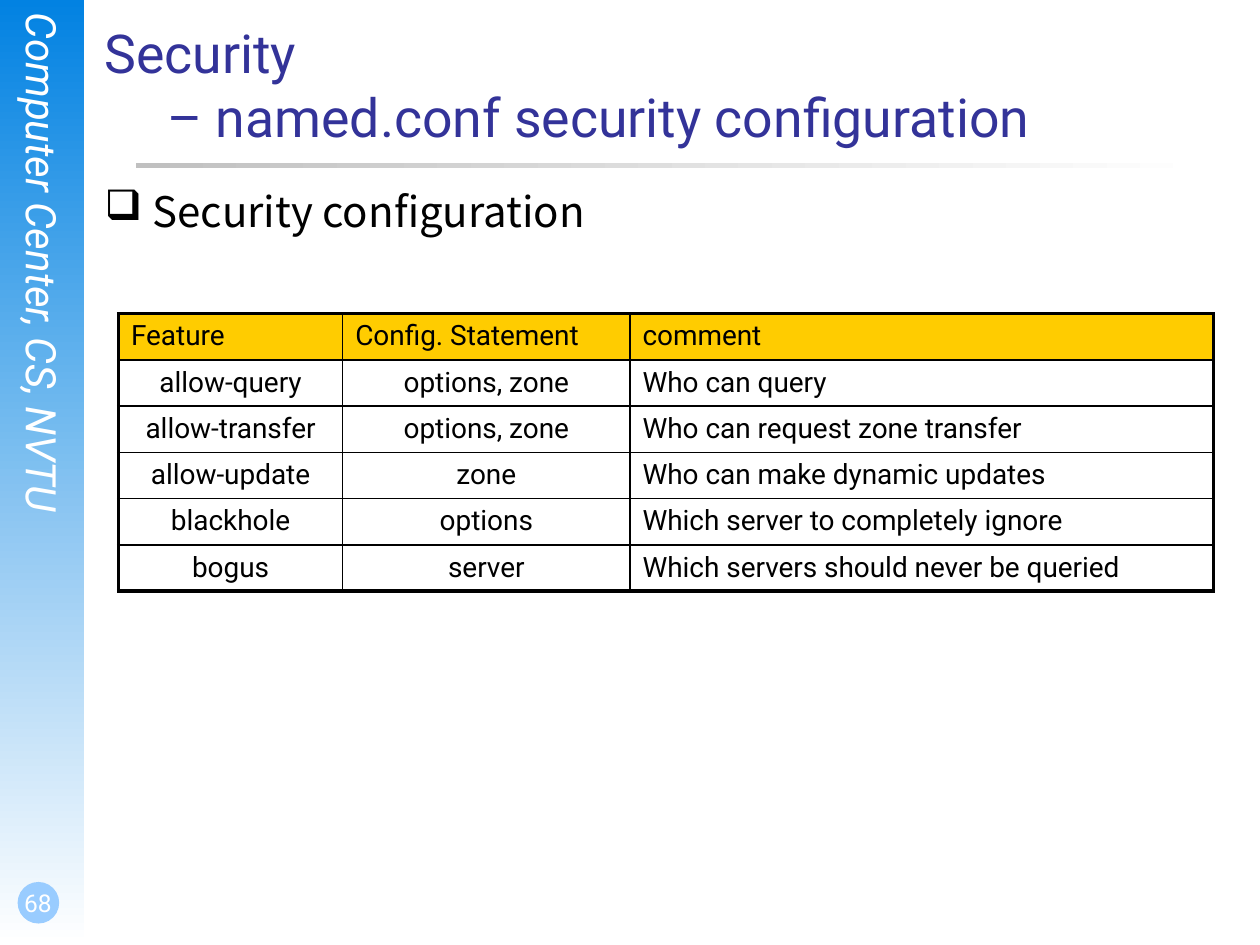
from lxml.etree import SubElement
from pptx import Presentation
from pptx.dml.color import RGBColor
from pptx.enum.shapes import MSO_SHAPE
from pptx.enum.text import MSO_ANCHOR, PP_ALIGN
from pptx.oxml.ns import qn
from pptx.util import Inches, Pt

BLACK = RGBColor(0x00, 0x00, 0x00)
WHITE = RGBColor(0xFF, 0xFF, 0xFF)
SIDEBAR_BLUE = RGBColor(0x02, 0x82, 0xE2)
BADGE_BLUE = RGBColor(0x99, 0xCC, 0xFF)
RULE_GRAY = RGBColor(0xC0, 0xC0, 0xC0)
TITLE_BLUE = RGBColor(0x33, 0x33, 0x99)
HEADER_GOLD = RGBColor(0xFF, 0xCC, 0x00)

COLUMN_WIDTHS = [1.78, 2.28, 4.63]
FEATURES = [
    ("Feature", "Config. Statement", "comment"),
    ("allow-query", "options, zone", "Who can query"),
    ("allow-transfer", "options, zone", "Who can request zone transfer"),
    ("allow-update", "zone", "Who can make dynamic updates"),
    ("blackhole", "options", "Which server to completely ignore"),
    ("bogus", "server", "Which servers should never be queried"),
]


class SlideBuilder:
    font = "Roboto"
    inner_border = Pt(1)
    outer_border = Pt(2.25)

    def __init__(self, slide):
        self.slide = slide

    def shape(self, kind, box, color, angle=None):
        shape = self.slide.shapes.add_shape(kind, *map(Inches, box))
        shape.shadow.inherit = False
        shape.line.fill.background()
        if angle is None:
            shape.fill.solid()
            shape.fill.fore_color.rgb = color
            return
        shape.fill.gradient()
        shape.fill.gradient_angle = angle
        for stop, stop_color in zip(shape.fill.gradient_stops, (color, WHITE)):
            stop.color.rgb = stop_color

    def style(self, paragraph, size, color, font=None, italic=False, align=PP_ALIGN.LEFT):
        paragraph.alignment = align
        for run in paragraph.runs:
            run.font.name = font or self.font
            run.font.size = Pt(size)
            run.font.color.rgb = color
            run.font.italic = italic

    def text(self, box, text, size, color, insets=(0, 0, 0, 0),
             anchor=MSO_ANCHOR.TOP, vertical=False, **style):
        frame = self.slide.shapes.add_textbox(*map(Inches, box)).text_frame
        frame.word_wrap = True
        frame.vertical_anchor = anchor
        (frame.margin_left, frame.margin_top,
         frame.margin_right, frame.margin_bottom) = map(Inches, insets)
        if vertical:
            frame._txBody.bodyPr.set("vert", "eaVert")
        paragraph = frame.paragraphs[0]
        paragraph.text = text
        self.style(paragraph, size, color, **style)
        return paragraph

    def bullet(self, box, text, size, color, mark, indent, **style):
        paragraph = self.text(box, text, size, color, **style)
        properties = paragraph._p.get_or_add_pPr()
        properties.set("marL", str(Inches(indent)))
        properties.set("indent", str(-Inches(indent)))
        SubElement(properties, qn("a:buChar"), char=mark)

    def border(self, cell, side, width):
        line = SubElement(cell._tc.get_or_add_tcPr(), qn(f"a:ln{side}"), w=str(width))
        fill = SubElement(line, qn("a:solidFill"))
        SubElement(fill, qn("a:srgbClr"), val=str(BLACK))

    def table(self, box, widths, rows, size):
        table = self.slide.shapes.add_table(
            len(rows), len(widths), *map(Inches, box)).table
        table.horz_banding = False
        for column, width in zip(table.columns, widths):
            column.width = Inches(width)
        last_row, last_column = len(rows) - 1, len(widths) - 1
        for r, row in enumerate(rows):
            for c, text in enumerate(row):
                cell = table.cell(r, c)
                outer_sides = {"L": c == 0, "R": c == last_column,
                               "T": r == 0, "B": r == last_row}
                for side, is_outer in outer_sides.items():
                    self.border(cell, side,
                                self.outer_border if is_outer else self.inner_border)
                if r == 0:
                    cell.fill.solid()
                    cell.fill.fore_color.rgb = HEADER_GOLD
                else:
                    cell.fill.background()
                cell.text_frame.text = text
                centered = r > 0 and c < last_column
                paragraph = cell.text_frame.paragraphs[0]
                self.style(paragraph, size, BLACK,
                           align=PP_ALIGN.CENTER if centered else PP_ALIGN.LEFT)
                for run in paragraph.runs:
                    run.font.bold = False


def main():
    presentation = Presentation()
    presentation.slide_width = Inches(10)
    presentation.slide_height = Inches(7.5)
    builder = SlideBuilder(presentation.slides.add_slide(presentation.slide_layouts[6]))

    builder.shape(MSO_SHAPE.RECTANGLE, (0, 0, 0.67, 7.5), SIDEBAR_BLUE, angle=270)
    builder.text((0.14, 0.1, 0.4, 5.11), "Computer Center, CS, NVTU", 24, WHITE,
                 vertical=True, italic=True)
    builder.shape(MSO_SHAPE.OVAL, (0.14, 7, 0.33, 0.33), BADGE_BLUE)
    builder.text((0, 6.83, 0.58, 0.5), "68", 14, WHITE, insets=(0.02, 0, 0, 0.05),
                 anchor=MSO_ANCHOR.BOTTOM, align=PP_ALIGN.CENTER)
    builder.shape(MSO_SHAPE.RECTANGLE, (1.08, 1.29, 8.5, 0.04), RULE_GRAY, angle=0)
    builder.text((0.83, 0.12, 8.8, 1.1),
                 "Security\v\t– named.conf security configuration",
                 30.6, TITLE_BLUE, anchor=MSO_ANCHOR.MIDDLE)
    builder.table((0.94, 2.49, sum(COLUMN_WIDTHS), 2.18), COLUMN_WIDTHS, FEATURES, 16)
    builder.bullet((0.83, 1.47, 8.17, 5.33), "Security configuration", 24, BLACK,
                   mark="❑", indent=0.38, font="Noto Sans CJK SC")

    presentation.save("out.pptx")


if __name__ == "__main__":
    main()
